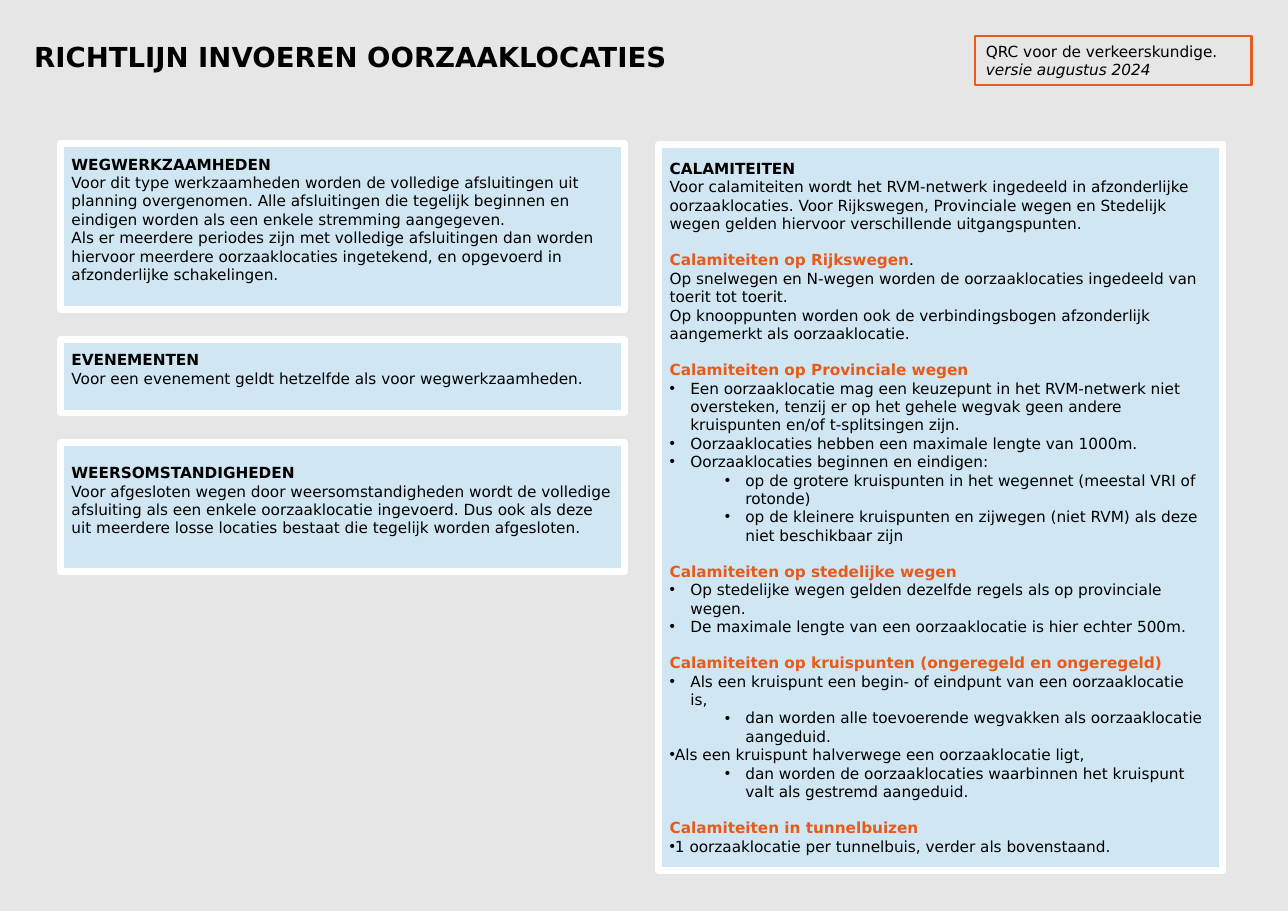
from pptx import Presentation
from pptx.dml.color import RGBColor
from pptx.enum import shapes, text
from pptx.oxml import parse_xml
from pptx.oxml.ns import nsdecls
from pptx.util import Pt

FONT = "DejaVu Sans"
BLACK, WHITE, GREY, BLUE = "000000", "FFFFFF", "E7E6E6", "D0E7F3"
ORANGE, EDGE = "E65A1A", "E95B19"

TITLE = "RICHTLIJN INVOEREN OORZAAKLOCATIES"
TAG = [("body", "QRC voor de verkeerskundige."), ("note", "versie augustus 2024")]

# Left column: height, bottom inset, lines
LEFT = [
    (108.72, 16.5, [
        ("head", "WEGWERKZAAMHEDEN"),
        ("body", "Voor dit type werkzaamheden worden de volledige afsluitingen uit "
                 "planning overgenomen. Alle afsluitingen die tegelijk beginnen en "
                 "eindigen worden als een enkele stremming aangegeven."),
        ("body", "Als er meerdere periodes zijn met volledige afsluitingen dan worden "
                 "hiervoor meerdere oorzaaklocaties ingetekend, en opgevoerd in "
                 "afzonderlijke schakelingen."),
    ]),
    (48.24, 16.5, [
        ("head", "EVENEMENTEN"),
        ("body", "Voor een evenement geldt hetzelfde als voor wegwerkzaamheden."),
    ]),
    (84.24, 16.5, [
        ("head", "WEERSOMSTANDIGHEDEN"),
        ("body", "Voor afgesloten wegen door weersomstandigheden wordt de volledige "
                 "afsluiting als een enkele oorzaaklocatie ingevoerd. Dus ook als deze uit "
                 "meerdere losse locaties bestaat die tegelijk worden afgesloten."),
    ]),
]
RIGHT = [
    ("head", "CALAMITEITEN"),
    ("body", "Voor calamiteiten wordt het RVM-netwerk ingedeeld in afzonderlijke "
             "oorzaaklocaties. Voor Rijkswegen, Provinciale wegen en Stedelijk wegen "
             "gelden hiervoor verschillende uitgangspunten."),
    ("sub", "Calamiteiten op Rijkswegen", "."),
    ("body", "Op snelwegen en N-wegen worden de oorzaaklocaties ingedeeld van toerit "
             "tot toerit."),
    ("body", "Op knooppunten worden ook de verbindingsbogen afzonderlijk aangemerkt "
             "als oorzaaklocatie."),
    ("sub", "Calamiteiten op Provinciale wegen"),
    ("item", "Een oorzaaklocatie mag een keuzepunt in het RVM-netwerk niet oversteken, "
             "tenzij er op het gehele wegvak geen andere kruispunten en/of "
             "t-splitsingen zijn."),
    ("item", "Oorzaaklocaties hebben een maximale lengte van 1000m."),
    ("item", "Oorzaaklocaties beginnen en eindigen:"),
    ("deep", "op de grotere kruispunten in het wegennet (meestal VRI of rotonde)"),
    ("deep", "op de kleinere kruispunten en zijwegen (niet RVM) als deze niet "
             "beschikbaar zijn"),
    ("sub", "Calamiteiten op stedelijke wegen"),
    ("item", "Op stedelijke wegen gelden dezelfde regels als op provinciale wegen."),
    ("item", "De maximale lengte van een oorzaaklocatie is hier echter 500m."),
    ("sub", "Calamiteiten op kruispunten (ongeregeld en ongeregeld)"),
    ("item", "Als een kruispunt een begin- of eindpunt van een oorzaaklocatie\nis,"),
    ("deep", "dan worden alle toevoerende wegvakken als oorzaaklocatie aangeduid."),
    ("flat", "Als een kruispunt halverwege een oorzaaklocatie ligt,"),
    ("deep", "dan worden de oorzaaklocaties waarbinnen het kruispunt valt als "
             "gestremd aangeduid."),
    ("sub", "Calamiteiten in tunnelbuizen"),
    ("flat", "1 oorzaaklocatie per tunnelbuis, verder als bovenstaand."),
]
INDENT = {"item": 13.5, "deep": 49.5, "flat": 0}
HANG, GAP, LINE = 13.5, 19.44, 11.64
COL_W, LEFT_X, RIGHT_X = 368.64, 39.6, 430.56


def color(code):
    return RGBColor.from_string(code)


def add_run(para, words, size=10, bold=False, italic=False, ink=BLACK):
    run = para.add_run()
    run.text = words
    font = run.font
    font.name, font.size, font.bold, font.italic = FONT, Pt(size), bold, italic
    font.color.rgb = color(ink)


def add_bullet(para, kind):
    props = para._p.get_or_add_pPr()
    props.set("marL", str(Pt(INDENT[kind])))
    props.set("indent", str(-Pt(HANG)))
    props.append(parse_xml(f'<a:buFont {nsdecls("a")} typeface="Arial"/>'))
    props.append(parse_xml(f'<a:buChar {nsdecls("a")} char="•"/>'))


def add_lines(frame, lines):
    for i, (kind, words, *rest) in enumerate(lines):
        para = frame.paragraphs[0] if i == 0 else frame.add_paragraph()
        para.alignment = text.PP_ALIGN.LEFT
        if kind == "sub":
            para.space_before = Pt(LINE)
        if kind == "deep":
            para.level = 1
        if kind in INDENT:
            add_bullet(para, kind)
        for j, part in enumerate(words.split("\n")):
            if j:
                para.add_line_break()
            add_run(para, part, bold=kind in ("head", "sub"), italic=kind == "note",
                    ink=ORANGE if kind == "sub" else BLACK)
        for part in rest:
            add_run(para, part)


def add_box(slide, place, lines, edge, width, fill=None):
    box = slide.shapes.add_shape(shapes.MSO_SHAPE.RECTANGLE, *map(Pt, place))
    box.shadow.inherit = False
    if fill:
        box.fill.solid()
        box.fill.fore_color.rgb = color(fill)
    else:
        box.fill.background()
    box.line.color.rgb = color(edge)
    box.line.width = Pt(width)
    frame = box.text_frame
    frame.word_wrap = True
    frame.vertical_anchor = text.MSO_ANCHOR.TOP
    add_lines(frame, lines)
    return frame


def add_panel(slide, place, lines, foot=7.2):
    frame = add_box(slide, place, lines, WHITE, 4.5, BLUE)
    frame.vertical_anchor = text.MSO_ANCHOR.MIDDLE
    frame.margin_left = frame.margin_right = frame.margin_top = Pt(7.2)
    frame.margin_bottom = Pt(foot)


def main():
    deck = Presentation()
    deck.slide_width, deck.slide_height = Pt(841.68), Pt(595.44)
    slide = deck.slides.add_slide(deck.slide_layouts[5])
    slide.background.fill.solid()
    slide.background.fill.fore_color.rgb = color(GREY)

    # Title
    title = slide.shapes.title
    title.left, title.top, title.width, title.height = map(Pt, (15.12, 22.32, 586.08, 28.8))
    frame = title.text_frame
    frame.word_wrap = True
    frame.auto_size = text.MSO_AUTO_SIZE.NONE
    frame.vertical_anchor = text.MSO_ANCHOR.TOP
    frame.paragraphs[0].alignment = text.PP_ALIGN.LEFT
    add_run(frame.paragraphs[0], TITLE, size=18, bold=True)

    # Version tag
    add_box(slide, (637.2, 23.76, 180.72, 31.68), TAG, EDGE, 1.5)

    # Left column, stacked with equal gaps
    top = 93.6
    for high, foot, lines in LEFT:
        add_panel(slide, (LEFT_X, top, COL_W, high), lines, foot)
        top += high + GAP

    # Right column
    add_panel(slide, (RIGHT_X, 94.32, COL_W, 474.48), RIGHT)
    deck.save("out.pptx")


if __name__ == "__main__":
    main()
